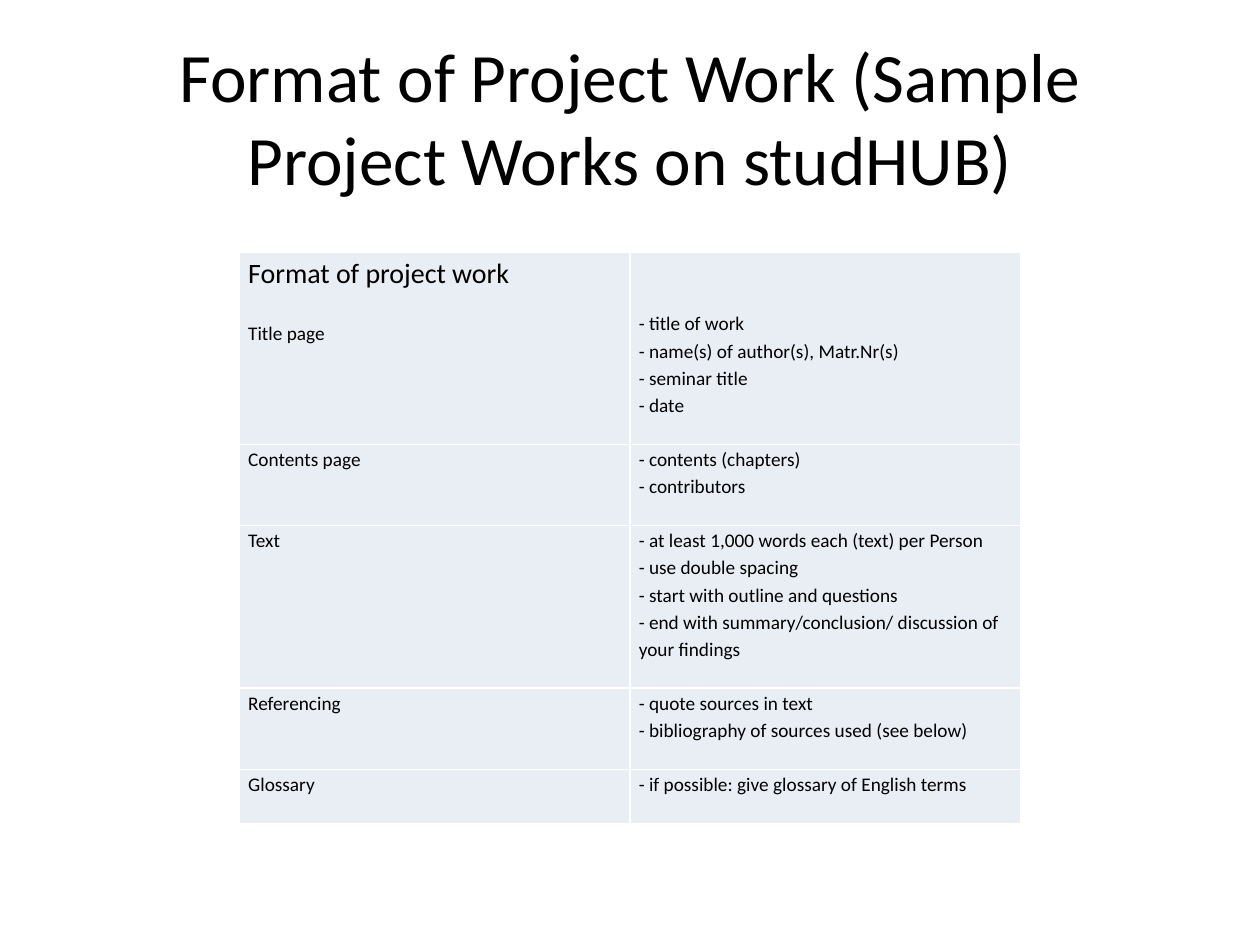
from dataclasses import dataclass

from lxml import etree
from pptx import Presentation
from pptx.dml.color import RGBColor
from pptx.enum.text import MSO_ANCHOR, PP_ALIGN
from pptx.oxml.ns import qn
from pptx.util import Inches, Pt

CENTER = PP_ALIGN.CENTER
MIDDLE = MSO_ANCHOR.MIDDLE
WIDTH, HEIGHT = 10, 7.5
LINE = 0.215
BORDER_SIDES = ("a:lnL", "a:lnR", "a:lnT", "a:lnB")

TITLE = "Format of Project Work (Sample Project Works on studHUB)"
HEADING = "Format of project work"
SECTIONS = [
    ("Title page", ["- title of work", "- name(s) of author(s), Matr.Nr(s)",
                    "- seminar title", "- date"]),
    ("Contents page", ["- contents (chapters)", "- contributors"]),
    ("Text", ["- at least 1,000 words each (text) per Person",
              "- use double spacing",
              "- start with outline and questions",
              "- end with summary/conclusion/ discussion of your findings"]),
    ("Referencing", ["- quote sources in text",
                     "- bibliography of sources used (see below)"]),
    ("Glossary", ["- if possible: give glossary of English terms"]),
]
LINES_PER_ROW = [7.1, 3, 6, 3, 2]


def color(hex_string):
    """Turn a hex string into a colour."""
    return RGBColor.from_string(hex_string)


@dataclass
class SlideBuilder:
    """Hold the style and the current slide."""

    slide: object
    font: str = "Calibri"
    ink: str = "000000"
    cell_fill: str = "E9EDF4"
    border: str = "FFFFFF"
    body_size: float = 11
    heading_size: float = 16
    title_size: float = 39.6

    def place(self, left, top, width, height):
        """Turn shares of the slide into lengths."""
        return (Inches(left * WIDTH), Inches(top * HEIGHT),
                Inches(width * WIDTH), Inches(height * HEIGHT))

    def set_text(self, para, text, size):
        """Put styled text in a paragraph."""
        para.text = text
        para.font.name = self.font
        para.font.size = Pt(size)
        para.font.color.rgb = color(self.ink)

    def title(self, text, *shares):
        """Add a centred title."""
        frame = self.slide.shapes.add_textbox(*self.place(*shares)).text_frame
        frame.word_wrap = True
        frame.vertical_anchor = MIDDLE
        para = frame.paragraphs[0]
        para.alignment = CENTER
        self.set_text(para, text, self.title_size)

    def outline(self, cell):
        """Draw thin borders around a cell."""
        properties = cell._tc.get_or_add_tcPr()
        for side in BORDER_SIDES:
            line = etree.SubElement(properties, qn(side), w=str(Pt(1)))
            fill = etree.SubElement(line, qn("a:solidFill"))
            etree.SubElement(fill, qn("a:srgbClr"), val=self.border)

    def cell(self, cell, lines, top=0):
        """Fill a cell with lines of text."""
        self.outline(cell)
        cell.fill.solid()
        cell.fill.fore_color.rgb = color(self.cell_fill)
        cell.margin_left = cell.margin_right = Inches(0.07)
        cell.margin_top, cell.margin_bottom = Inches(top), 0
        frame = cell.text_frame
        for index, text in enumerate(lines):
            para = frame.add_paragraph() if index else frame.paragraphs[0]
            para.line_spacing = 1.15
            self.set_text(para, text, self.body_size)

    def table(self, sections, row_lines, *shares):
        """Add a table with a topic and its requirements in each row."""
        frame = self.slide.shapes.add_table(len(sections), 2, *self.place(*shares))
        table = frame.table
        table.first_row = table.horz_banding = False
        for index, (topic, requirements) in enumerate(sections):
            table.rows[index].height = Inches(row_lines[index] * LINE)
            first = index == 0
            self.cell(table.cell(index, 0), [HEADING, topic] if first else [topic])
            self.cell(table.cell(index, 1), requirements, 0.45 if first else 0)
        heading, topic = table.cell(0, 0).text_frame.paragraphs
        heading.font.size = Pt(self.heading_size)
        topic.space_before = Pt(LINE * 72)


def main():
    """Build and save the deck."""
    deck = Presentation()
    deck.slide_width, deck.slide_height = Inches(WIDTH), Inches(HEIGHT)
    page = SlideBuilder(deck.slides.add_slide(deck.slide_layouts[6]))
    page.title(TITLE, 0.05, 0.04, 0.9, 1 / 6)
    table_height = sum(LINES_PER_ROW) * LINE / HEIGHT
    page.table(SECTIONS, LINES_PER_ROW, 0.19, 4 / 15, 0.62, table_height)
    deck.save("out.pptx")


if __name__ == "__main__":
    main()
